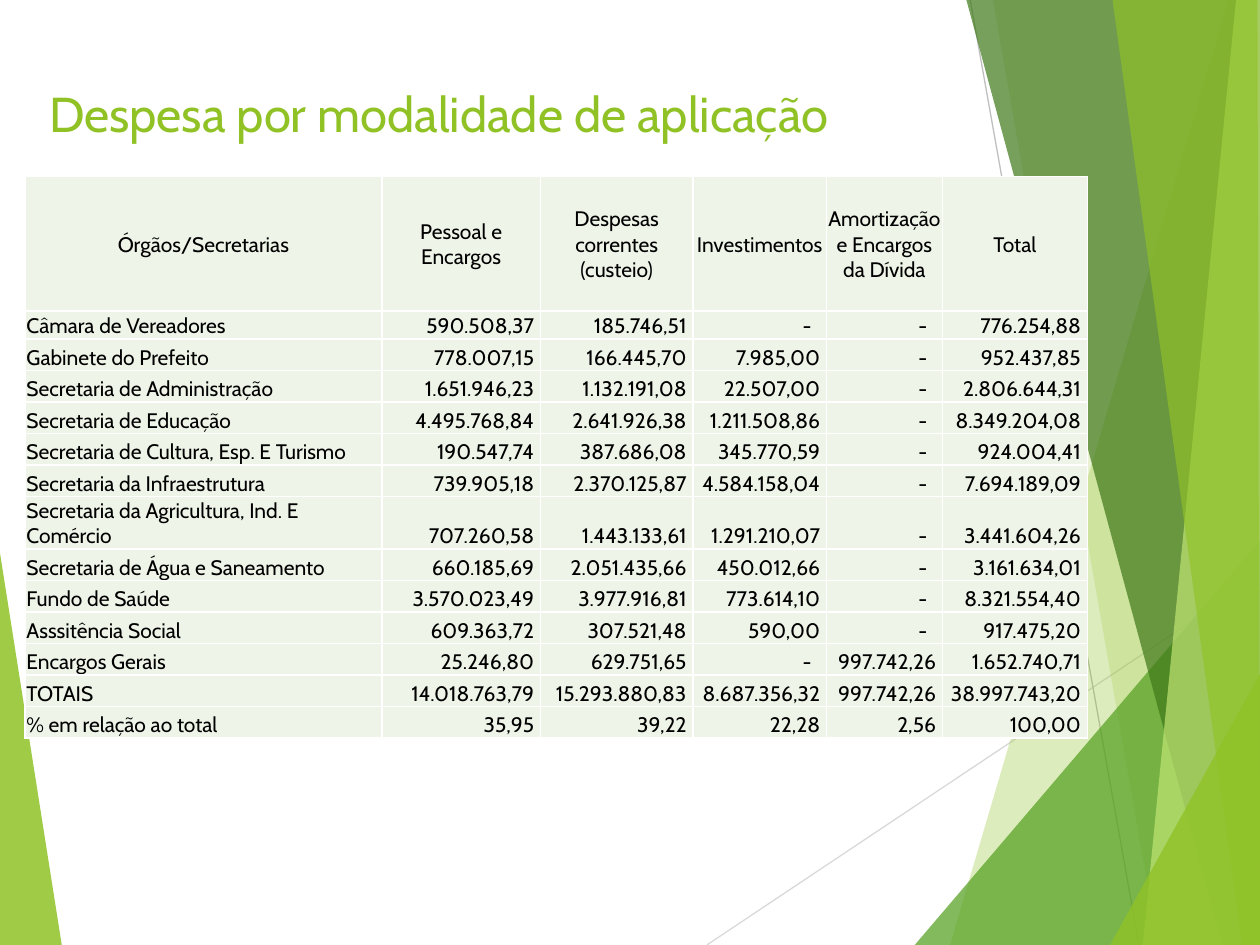
from lxml.etree import SubElement
from pptx import Presentation
from pptx.dml.color import RGBColor
from pptx.enum.shapes import MSO_CONNECTOR
from pptx.enum.text import MSO_ANCHOR, PP_ALIGN
from pptx.oxml.ns import qn
from pptx.util import Inches, Pt

COLORS = {
    "lime": "90C226", "green": "54A021", "forest": "3F7819", "pale": "C0E474",
    "line": "D9D9D9", "line_dark": "BFBFBF",
    "cell": "EEF4E8", "border": "FFFFFF", "text": "000000",
}
FONT = "Cabin"


def rgb(name):
    return RGBColor.from_string(COLORS[name])


def set_borders(cell):
    tcPr = cell._tc.get_or_add_tcPr()
    for i, side in enumerate(("lnL", "lnR", "lnT", "lnB")):
        ln = tcPr.makeelement(qn("a:" + side), {"w": str(Pt(1))})
        fill = SubElement(ln, qn("a:solidFill"))
        SubElement(fill, qn("a:srgbClr"), val=COLORS["border"])
        tcPr.insert(i, ln)


prs = Presentation()
prs.slide_width, prs.slide_height = Inches(10), Inches(7.5)
s = prs.slides.add_slide(prs.slide_layouts[6])

# Thin background lines
for x1, y1, x2, y2, color in [
    (5.61, 7.5, 10, 4.57, "line"),
    (7.7, 0, 9.04, 7.5, "line_dark"),
]:
    line = s.shapes.add_connector(
        MSO_CONNECTOR.STRAIGHT, Inches(x1), Inches(y1), Inches(x2), Inches(y2))
    line.line.color.rgb = rgb(color)
    line.line.width = Pt(0.75)
    SubElement(line._element.spPr, qn("a:effectLst"))

# Translucent facets: corner points, colour, opacity in percent
facets = [
    ([(0, 4.39), (0.49, 7.5), (0, 7.5)], "lime", 85),
    ([(9.75, 0), (7.54, 7.5), (10, 7.5), (10, 0)], "lime", 30),
    ([(7.88, 0), (9.19, 7.5), (10, 7.5), (10, 0)], "lime", 20),
    ([(7.26, 7.5), (10, 4.29), (10, 7.5)], "green", 72),
    ([(7.67, 0), (9.7, 7.5), (10, 7.5), (10, 0)], "forest", 70),
    ([(9.81, 0), (9.07, 7.5), (10, 7.5), (10, 0)], "pale", 70),
    ([(8.83, 0), (9.86, 7.5), (10, 7.5), (9.98, 0)], "lime", 65),
    ([(8.81, 7.5), (10, 5.35), (10, 7.5)], "lime", 80),
]
for corners, color, opacity in facets:
    points = [(Inches(x), Inches(y)) for x, y in corners]
    builder = s.shapes.build_freeform(*points[0])
    builder.add_line_segments(points[1:], close=True)
    sp = builder.convert_to_shape()
    sp.shadow.inherit = False
    sp.line.fill.background()
    sp.fill.solid()
    sp.fill.fore_color.rgb = rgb(color)
    clr = sp._element.spPr.find(qn("a:solidFill"))[0]
    SubElement(clr, qn("a:alpha"), val=str(opacity * 1000))

# Title
sp = s.shapes.add_textbox(Inches(0.2), Inches(0.52), Inches(7.13), Inches(0.76))
tf = sp.text_frame
tf.word_wrap = True
tf.vertical_anchor = MSO_ANCHOR.MIDDLE
tf.margin_left = Inches(0.19)
p = tf.paragraphs[0]
p.text = "Despesa por modalidade de aplicação"
p.font.name, p.font.size = FONT, Pt(28)
p.font.color.rgb = rgb("lime")

# Expense table
rows = [
    ("Órgãos/Secretarias", "Pessoal e Encargos", "Despesas correntes (custeio)",
     "Investimentos", "Amortização e Encargos da Dívida", "Total"),
    ("Câmara de Vereadores", "590.508,37", "185.746,51", "-", "-", "776.254,88"),
    ("Gabinete do Prefeito", "778.007,15", "166.445,70", "7.985,00", "-", "952.437,85"),
    ("Secretaria de Administração", "1.651.946,23", "1.132.191,08", "22.507,00", "-",
     "2.806.644,31"),
    ("Secretaria de Educação", "4.495.768,84", "2.641.926,38", "1.211.508,86", "-",
     "8.349.204,08"),
    ("Secretaria de Cultura, Esp. E Turismo", "190.547,74", "387.686,08", "345.770,59",
     "-", "924.004,41"),
    ("Secretaria da Infraestrutura", "739.905,18", "2.370.125,87", "4.584.158,04", "-",
     "7.694.189,09"),
    ("Secretaria da Agricultura, Ind. E Comércio", "707.260,58", "1.443.133,61",
     "1.291.210,07", "-", "3.441.604,26"),
    ("Secretaria de Água e Saneamento", "660.185,69", "2.051.435,66", "450.012,66", "-",
     "3.161.634,01"),
    ("Fundo de Saúde", "3.570.023,49", "3.977.916,81", "773.614,10", "-",
     "8.321.554,40"),
    ("Asssitência Social", "609.363,72", "307.521,48", "590,00", "-", "917.475,20"),
    ("Encargos Gerais", "25.246,80", "629.751,65", "-", "997.742,26", "1.652.740,71"),
    ("TOTAIS", "14.018.763,79", "15.293.880,83", "8.687.356,32", "997.742,26",
     "38.997.743,20"),
    ("% em relação ao total", "35,95", "39,22", "22,28", "2,56", "100,00"),
]
col_widths = [2.83, 1.26, 1.21, 1.06, 0.92, 1.15]
row_heights = [1.07, 0.22] + [0.25] * 5 + [0.42] + [0.25] * 6

table = s.shapes.add_table(
    len(rows), len(col_widths), Inches(0.2), Inches(1.4),
    Inches(sum(col_widths)), Inches(sum(row_heights))).table
table.first_row = table.horz_banding = False
for column, width in zip(table.columns, col_widths):
    column.width = Inches(width)
for row, height in zip(table.rows, row_heights):
    row.height = Inches(height)

for i, values in enumerate(rows):
    for j, value in enumerate(values):
        cell = table.cell(i, j)
        cell.margin_left = cell.margin_right = cell.margin_top = Inches(0.01)
        cell.margin_bottom = 0
        cell.vertical_anchor = MSO_ANCHOR.BOTTOM if i else MSO_ANCHOR.MIDDLE
        cell.fill.solid()
        cell.fill.fore_color.rgb = rgb("cell")
        set_borders(cell)
        p = cell.text_frame.paragraphs[0]
        p.text = value
        p.font.name, p.font.size = FONT, Pt(12)
        p.font.color.rgb = rgb("text")
        if i == 0:
            p.alignment = PP_ALIGN.CENTER
        elif j > 0:
            p.alignment = PP_ALIGN.RIGHT
            cell.margin_right = Inches(0.12 if value == "-" else 0.05)

prs.save("out.pptx")
